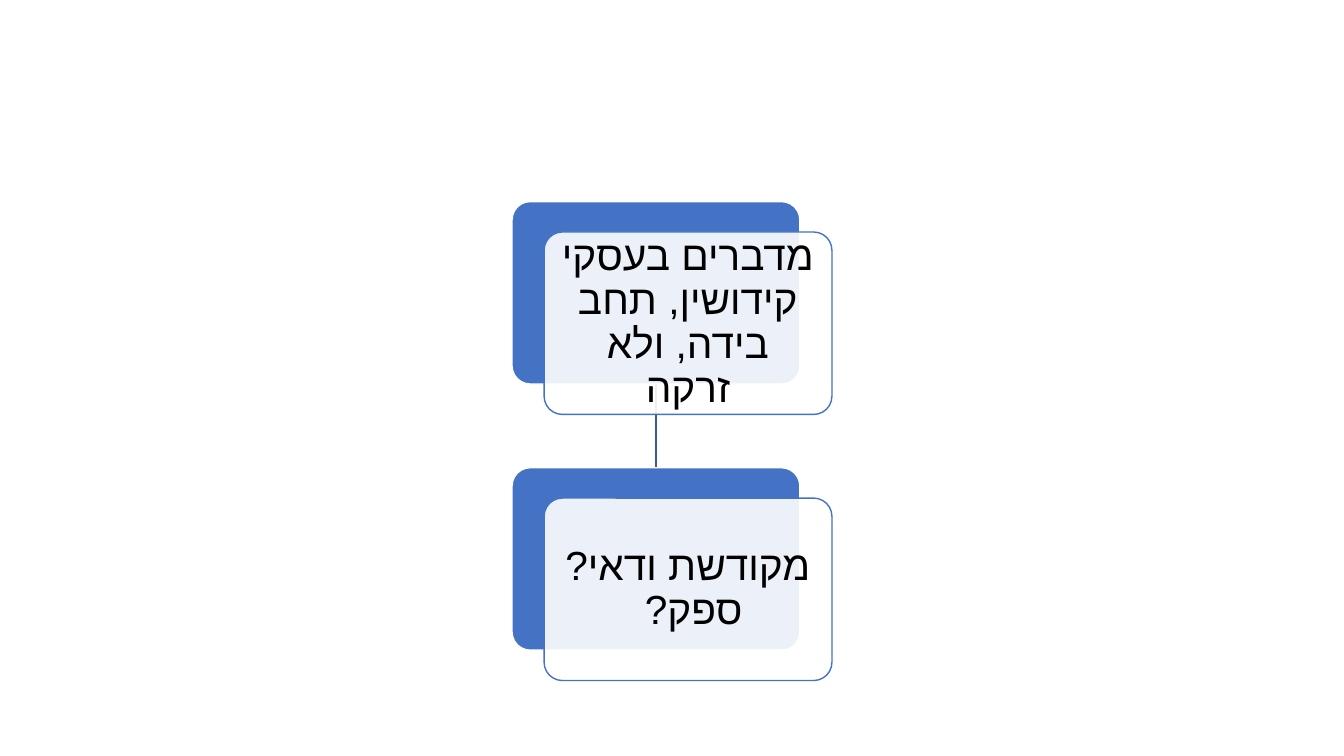
from dataclasses import dataclass

from lxml import etree
from pptx import Presentation
from pptx.dml.color import RGBColor
from pptx.enum.lang import MSO_LANGUAGE_ID
from pptx.enum.shapes import MSO_CONNECTOR, MSO_SHAPE
from pptx.enum.text import MSO_ANCHOR, PP_ALIGN
from pptx.oxml.ns import qn
from pptx.util import Pt

ROUNDED = MSO_SHAPE.ROUNDED_RECTANGLE
STRAIGHT = MSO_CONNECTOR.STRAIGHT
MIDDLE = MSO_ANCHOR.MIDDLE
CENTER = PP_ALIGN.CENTER
HEBREW = MSO_LANGUAGE_ID.HEBREW

FONT, HEBREW_FONT = "Calibri", "Arial"
BLUE, LINK_BLUE, WHITE, BLACK = "4472C4", "365B9D", "FFFFFF", "000000"

# Geometry in points
LEFT, TOP = 365.76, 144
WIDTH, HEIGHT = 205.6, 130.32
SHIFT_X, SHIFT_Y = 22.9, 21.7
STEP = 190.08
INSET = 8.64


@dataclass
class Stage:
    text: str
    row: int

    @property
    def top(self) -> float:
        return TOP + self.row * STEP


STAGES = [
    Stage("מדברים בעסקי קידושין, תחב בידה, ולא זרקה", 0),
    Stage("מקודשת ודאי? ספק? ", 1),
]


def paint(color_format, color: str) -> None:
    color_format.rgb = RGBColor.from_string(color)


def add_card(slide, left: float, top: float, fill: str, line: str):
    card = slide.shapes.add_shape(ROUNDED, Pt(left), Pt(top), Pt(WIDTH), Pt(HEIGHT))
    card.adjustments[0] = 0.1
    card.shadow.inherit = False
    card.fill.solid()
    paint(card.fill.fore_color, fill)
    paint(card.line.color, line)
    card.line.width = Pt(1)
    return card


def make_translucent(card, percent: int) -> None:
    color = card._element.spPr.find(qn("a:solidFill"))[0]
    etree.SubElement(color, qn("a:alpha"), val=str(percent * 1000))


def write_hebrew(card, text: str) -> None:
    frame = card.text_frame
    frame_format = {"word_wrap": True, "vertical_anchor": MIDDLE}
    frame_format |= {f"margin_{side}": Pt(INSET) for side in ("left", "top", "right", "bottom")}
    for name, value in frame_format.items():
        setattr(frame, name, value)

    paragraph = frame.paragraphs[0]
    paragraph.alignment = CENTER
    paragraph.line_spacing = 0.9
    paragraph._p.get_or_add_pPr().set("rtl", "1")

    run = paragraph.add_run()
    run.text = text
    for name, value in {"name": FONT, "size": Pt(29), "language_id": HEBREW}.items():
        setattr(run.font, name, value)
    paint(run.font.color, BLACK)
    # Hebrew takes its font from the complex-script slot
    etree.SubElement(run._r.get_or_add_rPr(), qn("a:cs"), typeface=HEBREW_FONT)


def add_link(slide, upper: Stage, lower: Stage) -> None:
    x = Pt(LEFT + WIDTH / 2)
    link = slide.shapes.add_connector(STRAIGHT, x, Pt(upper.top + HEIGHT), x, Pt(lower.top))
    paint(link.line.color, LINK_BLUE)
    link.line.width = Pt(1)
    etree.SubElement(link._element.spPr, qn("a:effectLst"))


def add_stage(slide, stage: Stage) -> None:
    add_card(slide, LEFT, stage.top, BLUE, WHITE)
    front = add_card(slide, LEFT + SHIFT_X, stage.top + SHIFT_Y, WHITE, BLUE)
    make_translucent(front, 90)
    write_hebrew(front, stage.text)


def main() -> None:
    deck = Presentation()
    deck.slide_width, deck.slide_height = Pt(960), Pt(540)
    slide = deck.slides.add_slide(deck.slide_layouts[6])

    # Links lie behind the cards
    for upper, lower in zip(STAGES, STAGES[1:]):
        add_link(slide, upper, lower)

    # Each stage is a blue card with a translucent text card in front
    for stage in STAGES:
        add_stage(slide, stage)

    deck.save("out.pptx")


if __name__ == "__main__":
    main()
